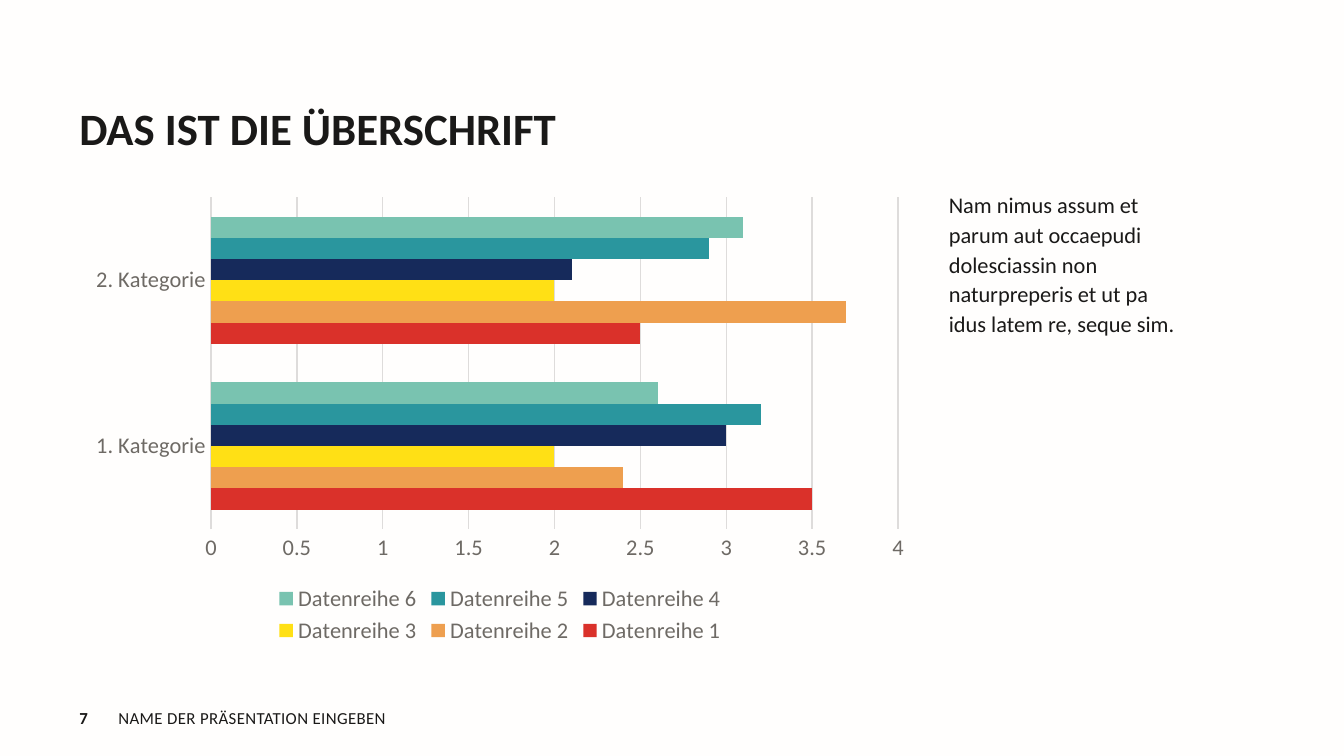
from pptx import Presentation
from pptx.chart.data import CategoryChartData
from pptx.dml.color import RGBColor
from pptx.enum.chart import XL_CHART_TYPE, XL_LEGEND_POSITION, XL_TICK_MARK
from pptx.enum.text import MSO_ANCHOR
from pptx.util import Pt

FONT = "Calibri"
BACKGROUND = RGBColor(0xFF, 0xFE, 0xFD)
INK = RGBColor(0x1A, 0x19, 0x18)
LABEL_GREY = RGBColor(0x6E, 0x6A, 0x65)
GRID_GREY = RGBColor(0xDE, 0xDC, 0xDB)
RED = RGBColor(0xDA, 0x31, 0x2A)
ORANGE = RGBColor(0xEE, 0x9F, 0x4F)
YELLOW = RGBColor(0xFF, 0xE0, 0x15)
NAVY = RGBColor(0x16, 0x2A, 0x5B)
TEAL = RGBColor(0x2A, 0x96, 0x9E)
MINT = RGBColor(0x79, 0xC3, 0xB0)

LEFT = 42.5
CONTENT_TOP = 100.8
CONTENT_HEIGHT = 247
MAIN_WIDTH = 450.7

CATEGORIES = ["1. Kategorie", "2. Kategorie"]
SERIES = [
    ("Datenreihe 1", (3.5, 2.5), RED),
    ("Datenreihe 2", (2.4, 3.7), ORANGE),
    ("Datenreihe 3", (2, 2), YELLOW),
    ("Datenreihe 4", (3, 2.1), NAVY),
    ("Datenreihe 5", (3.2, 2.9), TEAL),
    ("Datenreihe 6", (2.6, 3.1), MINT),
]


def style_font(font, size, color, bold=False):
    font.name = FONT
    font.size = Pt(size)
    font.bold = bold
    font.color.rgb = color


def add_text(slide, text, left, top, width, height, size, leading,
             bold=False, anchor=MSO_ANCHOR.TOP, wrap=True, tracking=0):
    box = slide.shapes.add_textbox(Pt(left), Pt(top), Pt(width), Pt(height))
    frame = box.text_frame
    frame.margin_left = frame.margin_top = 0
    frame.margin_right = frame.margin_bottom = 0
    frame.word_wrap = wrap
    frame.vertical_anchor = anchor
    frame.text = text
    paragraph = frame.paragraphs[0]
    paragraph.line_spacing = Pt(leading)
    run = paragraph.runs[0]
    style_font(run.font, size, INK, bold)
    if tracking:
        run._r.get_or_add_rPr().set("spc", str(tracking))


def style_axis(axis):
    axis.major_tick_mark = XL_TICK_MARK.NONE
    axis.minor_tick_mark = XL_TICK_MARK.NONE
    style_font(axis.tick_labels.font, 12, LABEL_GREY)


def style_line(line):
    line.color.rgb = GRID_GREY
    line.width = Pt(0.75)


def add_bar_chart(slide):
    data = CategoryChartData()
    data.categories = CATEGORIES
    for name, values, _ in SERIES:
        data.add_series(name, values)
    chart = slide.shapes.add_chart(
        XL_CHART_TYPE.BAR_CLUSTERED, Pt(LEFT), Pt(CONTENT_TOP),
        Pt(MAIN_WIDTH), Pt(CONTENT_HEIGHT), data).chart
    style_font(chart.font, 10, INK)
    chart.has_title = False

    # Bars
    plot = chart.plots[0]
    plot.gap_width = 182
    plot.overlap = 0
    plot.vary_by_categories = False
    for series, (_, _, color) in zip(plot.series, SERIES):
        series.format.fill.solid()
        series.format.fill.fore_color.rgb = color

    # Axes
    style_axis(chart.category_axis)
    style_line(chart.category_axis.format.line)
    value_axis = chart.value_axis
    style_axis(value_axis)
    value_axis.format.line.fill.background()
    value_axis.minimum_scale = 0
    value_axis.maximum_scale = 4
    value_axis.major_unit = 0.5
    value_axis.has_major_gridlines = True
    style_line(value_axis.major_gridlines.format.line)

    # Legend
    chart.has_legend = True
    chart.legend.position = XL_LEGEND_POSITION.BOTTOM
    chart.legend.include_in_layout = False
    style_font(chart.legend.font, 12, LABEL_GREY)


def main():
    presentation = Presentation()
    presentation.slide_width = Pt(720)
    presentation.slide_height = Pt(405)
    slide = presentation.slides.add_slide(presentation.slide_layouts[6])
    slide.background.fill.solid()
    slide.background.fill.fore_color.rgb = BACKGROUND

    # Footer
    add_text(slide, "7", LEFT, 378.7, 20.9, 11.5, 9, 12, bold=True,
             anchor=MSO_ANCHOR.BOTTOM, wrap=False, tracking=20)
    add_text(slide, "NAME DER PRÄSENTATION EINGEBEN", 63.4, 375.8, 430.6, 14.4,
             9, 12, anchor=MSO_ANCHOR.BOTTOM, tracking=20)

    # Heading, chart and commentary
    add_text(slide, "DAS IST DIE ÜBERSCHRIFT", LEFT, 59, MAIN_WIDTH, 41.8,
             24, 24, bold=True)
    add_bar_chart(slide)
    add_text(slide, "Nam nimus assum et parum aut occaepudi dolesciassin non "
             "naturpreperis et ut pa idus latem re, seque sim.",
             508.3, CONTENT_TOP, 127.4, CONTENT_HEIGHT, 12, 16)

    presentation.save("out.pptx")


if __name__ == "__main__":
    main()
